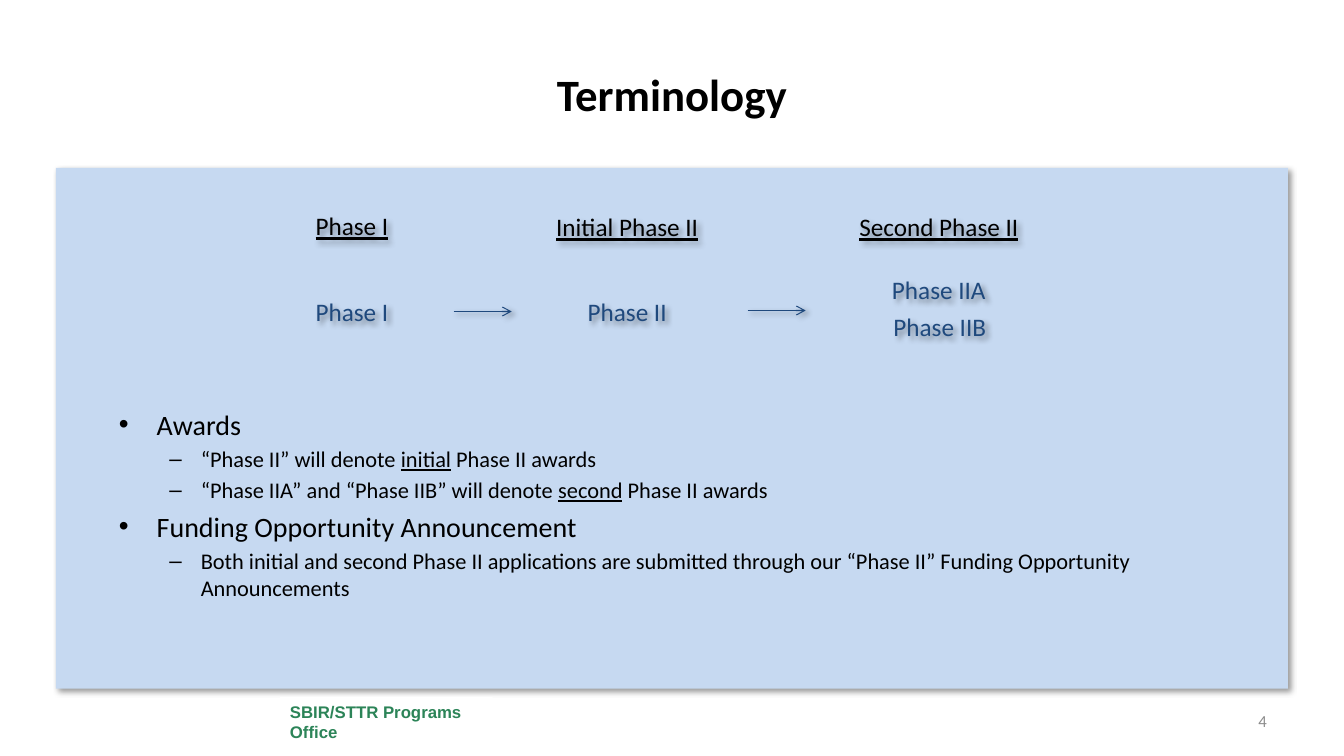
"""Build the Terminology slide on phase names of awards."""
from dataclasses import dataclass

from lxml import etree
from pptx import Presentation
from pptx.dml.color import RGBColor
from pptx.enum import shapes, text
from pptx.oxml import ns
from pptx.util import Pt

BLACK = RGBColor(0x00, 0x00, 0x00)
WHITE = RGBColor(0xFF, 0xFF, 0xFF)
PANEL = RGBColor(0xC6, 0xD9, 0xF1)
NAVY = RGBColor(0x1F, 0x49, 0x7D)
GREEN = RGBColor(0x2C, 0x84, 0x58)
GRAY = RGBColor(0x8C, 0x8C, 0x8C)


@dataclass
class Label:
    text: str
    center: float
    top: float


@dataclass
class Arrow:
    left: float
    y: float


@dataclass
class Bullet:
    runs: list[str]
    level: int = 0


@dataclass
class BulletStyle:
    char: str
    size: float
    margin: float
    hanging: float


COLUMNS = (251.4, 448, 670.6)
HEADINGS = [
    Label("Phase I", COLUMNS[0], 145.4),
    Label("Initial Phase II", COLUMNS[1], 146.2),
    Label("Second Phase II", COLUMNS[2], 146.2),
]
NAMES = [
    Label("Phase I", COLUMNS[0], 208),
    Label("Phase II", COLUMNS[1], 208),
    Label("Phase IIA", COLUMNS[2], 192.2),
    Label("Phase IIB", COLUMNS[2] + 0.7, 218.9),
]
ARROWS = [Arrow(324, 222.5), Arrow(534, 221.8)]
ARROW_WIDTH = 41.5
STYLES = [BulletStyle("•", 20, 27, 27), BulletStyle("–", 16, 58.5, 22.5)]
BULLETS = [
    Bullet(["Awards"]),
    Bullet(["“Phase II” will denote ", "initial", " Phase II awards"], 1),
    Bullet(["“Phase IIA” and “Phase IIB” will denote ", "second", " Phase II awards"], 1),
    Bullet(["Funding Opportunity Announcement"]),
    Bullet(["Both initial and second Phase II applications are submitted through "
            "our “Phase II” Funding Opportunity Announcements"], 1),
]


def add_shadow(s) -> None:
    """Give a shape a soft shadow towards the lower right."""
    sppr = s._element.spPr
    for old in sppr.findall(ns.qn("a:effectLst")):
        sppr.remove(old)
    effects = etree.SubElement(sppr, ns.qn("a:effectLst"))
    shadow = etree.SubElement(effects, ns.qn("a:outerShdw"), blurRad=str(Pt(4)),
                              dist=str(Pt(3)), dir="2700000", algn="tl", rotWithShape="0")
    color = etree.SubElement(shadow, ns.qn("a:srgbClr"), val=str(BLACK))
    etree.SubElement(color, ns.qn("a:alpha"), val="40000")


def add_run(p, content: str, *, size: float, color: RGBColor = BLACK,
            font: str = "Calibri", bold: bool = False, underline: bool = False) -> None:
    """Append a formatted run to a paragraph."""
    r = p.add_run()
    r.text = content
    r.font.name, r.font.size = font, Pt(size)
    r.font.bold, r.font.underline = bold, underline
    r.font.color.rgb = color


def fill_text(s, content: str, *, align=text.PP_ALIGN.CENTER,
              anchor=text.MSO_ANCHOR.MIDDLE, **fmt) -> None:
    """Write one formatted paragraph into a shape."""
    tf = s.text_frame
    tf.word_wrap, tf.vertical_anchor = True, anchor
    p = tf.paragraphs[0]
    p.alignment = align
    add_run(p, content, **fmt)


def add_box(slide, left: float, top: float, width: float, height: float):
    """Add an empty text box."""
    return slide.shapes.add_textbox(Pt(left), Pt(top), Pt(width), Pt(height))


def add_rect(slide, left: float, top: float, width: float, height: float, color: RGBColor):
    """Add a plain filled rectangle without outline."""
    s = slide.shapes.add_shape(shapes.MSO_SHAPE.RECTANGLE,
                               Pt(left), Pt(top), Pt(width), Pt(height))
    s.shadow.inherit = False
    s.fill.solid()
    s.fill.fore_color.rgb = color
    s.line.fill.background()
    return s


def add_label(slide, label: Label, width: float, height: float, **fmt) -> None:
    """Add a shadowed label centred on its column."""
    s = add_box(slide, label.center - width / 2, label.top, width, height)
    fill_text(s, label.text, size=18, **fmt)
    add_shadow(s)


def add_arrow(slide, arrow: Arrow) -> None:
    """Add a shadowed arrow pointing right."""
    s = slide.shapes.add_connector(shapes.MSO_CONNECTOR.STRAIGHT, Pt(arrow.left), Pt(arrow.y),
                                   Pt(arrow.left + ARROW_WIDTH), Pt(arrow.y))
    s.line.color.rgb = NAVY
    s.line.width = Pt(0.75)
    etree.SubElement(s.line._get_or_add_ln(), ns.qn("a:tailEnd"), type="arrow")
    add_shadow(s)


def add_bullets(slide, bullets: list[Bullet]) -> None:
    """Add the two-level list, underlining every second run."""
    tf = add_box(slide, 77.8, 287.3, 810, 207.4).text_frame
    tf.word_wrap = True
    for i, bullet in enumerate(bullets):
        style = STYLES[bullet.level]
        p = tf.add_paragraph() if i else tf.paragraphs[0]
        p.level = bullet.level
        ppr = p._p.get_or_add_pPr()
        ppr.set("marL", str(Pt(style.margin)))
        ppr.set("indent", str(-Pt(style.hanging)))
        etree.SubElement(ppr, ns.qn("a:buFont"), typeface="Arial")
        etree.SubElement(ppr, ns.qn("a:buChar"), char=style.char)
        p.space_before = Pt(style.size * 0.2 if i else 0)
        for j, content in enumerate(bullet.runs):
            add_run(p, content, size=style.size, underline=j % 2 == 1)


def main() -> None:
    """Compose and save the slide."""
    prs = Presentation()
    prs.slide_width, prs.slide_height = Pt(960), Pt(540)
    slide = prs.slides.add_slide(prs.slide_layouts[6])
    add_shadow(add_rect(slide, 40, 120, 880, 372, PANEL))
    fill_text(add_rect(slide, 200, 498, 152, 34.6, WHITE), "SBIR/STTR Programs Office",
              align=text.PP_ALIGN.LEFT, size=12, font="Arial", color=GREEN, bold=True)
    fill_text(add_box(slide, 48, 21.6, 864, 90), "Terminology", size=32, bold=True)
    fill_text(add_box(slide, 760, 500.4, 152, 28.8), "4",
              align=text.PP_ALIGN.RIGHT, size=12, color=GRAY)
    for heading in HEADINGS:
        add_label(slide, heading, 190.8, 31.7, underline=True)
    for name in NAMES:
        add_label(slide, name, 164.2, 29, color=NAVY, anchor=text.MSO_ANCHOR.TOP)
    add_bullets(slide, BULLETS)
    for arrow in ARROWS:
        add_arrow(slide, arrow)
    prs.save("out.pptx")


if __name__ == "__main__":
    main()
